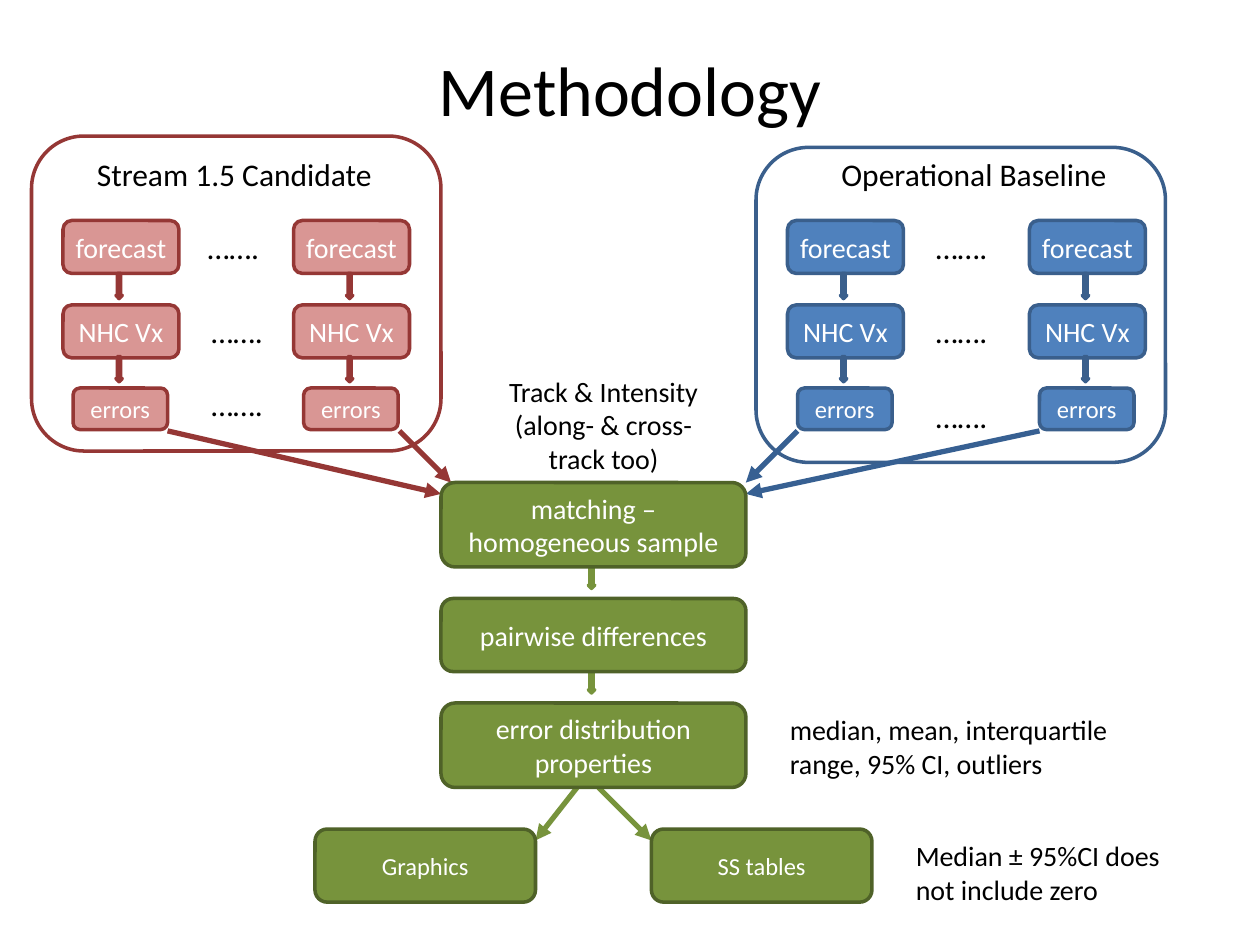
import pptx
import pptx.util
import pptx.dml.color
import pptx.enum.shapes
import pptx.enum.text
import pptx.oxml
import pptx.oxml.ns
from dataclasses import dataclass
from typing import Optional

Inches = pptx.util.Inches
Pt = pptx.util.Pt
Shape = pptx.enum.shapes.MSO_SHAPE
Align = pptx.enum.text.PP_ALIGN
Anchor = pptx.enum.text.MSO_ANCHOR

FONT = "Calibri"
BLACK, WHITE = "000000", "FFFFFF"
GREEN, DARK_GREEN, PALE_GREEN = "77933C", "4F6228", "C3D69B"
DOTS = "……."


@dataclass
class Stream:
    """One framed set of forecasts feeding the matching step."""
    title: str
    title_left: float
    title_width: float
    frame_left: float
    frame_top: float
    columns: tuple
    dots: tuple
    fill: str
    line: str
    arrow: str
    arrows: tuple


STREAMS = [
    Stream("Stream 1.5 Candidate", 0.67, 2.41, 0.25, 1.08, (0.5, 2.33),
           ((1.55, 1.76), (1.58, 2.43), (1.58, 3.01)),
           "D99694", "953735", "953735",
           ((1.33, 3.42, 3.5, 3.92), (3.17, 3.42, 3.58, 3.83))),
    Stream("Operational Baseline", 6.58, 2.33, 6, 1.17, (6.25, 8.17),
           ((7.33, 1.76), (7.33, 2.43), (7.33, 3.1)),
           "4F81BD", "3A5F8C", "376092",
           ((6.33, 3.42, 5.92, 3.83), (8.25, 3.42, 5.92, 3.92))),
]


def color(value: str) -> pptx.dml.color.RGBColor:
    return pptx.dml.color.RGBColor.from_string(value)


def write(frame, text: str, *, size: float = 16, ink: str = BLACK,
          align=Align.LEFT, anchor=Anchor.TOP, wrap: bool = True,
          inset: Optional[float] = None) -> None:
    """Put one formatted paragraph in a text frame."""
    frame.word_wrap = wrap
    frame.vertical_anchor = anchor
    if inset is not None:
        frame.margin_left = frame.margin_right = Inches(inset)
        frame.margin_top = frame.margin_bottom = Inches(inset)
    para = frame.paragraphs[0]
    para.alignment = align
    span = para.add_run()
    span.text = text
    span.font.name = FONT
    span.font.size = Pt(size)
    span.font.color.rgb = color(ink)


def add_label(shapes, text: str, left: float, top: float, width: float,
              height: float, **style) -> None:
    box = shapes.add_textbox(Inches(left), Inches(top), Inches(width), Inches(height))
    write(box.text_frame, text, **style)


def add_block(shapes, kind, left: float, top: float, width: float, height: float,
              fill: Optional[str], line: str, text: str = "", **style) -> None:
    box = shapes.add_shape(kind, Inches(left), Inches(top), Inches(width), Inches(height))
    box.shadow.inherit = False
    if fill:
        box.fill.solid()
        box.fill.fore_color.rgb = color(fill)
    else:
        box.fill.background()
    box.line.color.rgb = color(line)
    box.line.width = Pt(2)
    if text:
        write(box.text_frame, text, ink=WHITE, align=Align.CENTER,
              anchor=Anchor.MIDDLE, **style)


def add_arrow(shapes, left: float, top: float, right: float, bottom: float,
              ink: str) -> None:
    arrow = shapes.add_connector(pptx.enum.shapes.MSO_CONNECTOR.STRAIGHT, Inches(left),
                                 Inches(top), Inches(right), Inches(bottom))
    arrow.line.color.rgb = color(ink)
    arrow.line.width = Pt(3)
    outline = arrow.line._get_or_add_ln()
    head = pptx.oxml.ns.qn("a:tailEnd")
    outline.append(outline.makeelement(head, {"type": "triangle"}))
    properties = arrow._element.spPr
    properties.append(properties.makeelement(pptx.oxml.ns.qn("a:effectLst"), {}))


def add_column(shapes, left: float, stream: Stream) -> None:
    """Forecast, verification and errors, joined by small down arrows."""
    group = shapes.add_group_shape().shapes
    paint = (stream.fill, stream.line)
    add_block(group, Shape.ROUNDED_RECTANGLE, left, 1.75, 0.92, 0.42, *paint,
              "forecast", inset=0.05)
    add_block(group, Shape.ROUNDED_RECTANGLE, left + 0.08, 3.08, 0.75, 0.33, *paint,
              "errors", size=14, inset=0.05)
    add_block(group, Shape.ROUNDED_RECTANGLE, left, 2.42, 0.92, 0.42, *paint, "NHC Vx")
    for top in (2.17, 2.83):
        add_block(group, Shape.DOWN_ARROW, left + 0.42, top, 0.05, 0.2, *paint)


def main() -> None:
    deck = pptx.Presentation()
    deck.slide_width, deck.slide_height = Inches(10), Inches(7.5)
    page = deck.slides.add_slide(deck.slide_layouts[5])
    shapes = page.shapes

    # Title
    title = shapes.title
    title.left, title.top = Inches(0.5), Inches(0.2)
    title.width, title.height = Inches(9), Inches(1)
    write(title.text_frame, "Methodology", size=40, align=Align.CENTER,
          anchor=Anchor.MIDDLE)

    # Results, with the arrows that lead to them
    add_arrow(shapes, 4.75, 6.25, 5.17, 6.67, GREEN)
    add_arrow(shapes, 4.58, 6.25, 4.25, 6.67, GREEN)
    for left, text in ((2.5, "Graphics"), (5.17, "SS tables")):
        add_block(shapes, Shape.ROUNDED_RECTANGLE, left, 6.58, 1.75, 0.58,
                  GREEN, DARK_GREEN, text, size=14, inset=0.05)

    # Candidate and baseline streams
    for stream in STREAMS:
        add_block(shapes, Shape.ROUNDED_RECTANGLE, stream.frame_left, stream.frame_top,
                  3.25, 2.5, None, stream.line)
        add_label(shapes, stream.title, stream.title_left, 1.18, stream.title_width,
                  0.4, size=18, wrap=False)
        for left in stream.columns:
            add_column(shapes, left, stream)
        for left, top in stream.dots:
            add_label(shapes, DOTS, left, top, 0.61, 0.4, size=18, wrap=False)
        for ends in stream.arrows:
            add_arrow(shapes, *ends, stream.arrow)

    # Central processing steps
    for top in (4.44, 5.27):
        add_block(shapes, Shape.DOWN_ARROW, 4.67, top, 0.05, 0.23, PALE_GREEN, GREEN)
    for top, height, text in ((3.83, 0.67, "matching – homogeneous sample"),
                              (4.75, 0.58, "pairwise differences"),
                              (5.58, 0.67, "error distribution properties")):
        add_block(shapes, Shape.ROUNDED_RECTANGLE, 3.5, top, 2.42, height,
                  GREEN, DARK_GREEN, text)

    # Side notes
    add_label(shapes, "Track & Intensity (along- & cross- track too)",
              3.83, 2.92, 1.92, 0.91, align=Align.CENTER)
    add_label(shapes, "median, mean, interquartile range, 95% CI, outliers",
              6.17, 5.61, 2.92, 0.64)
    add_label(shapes, "Median ± 95%CI does not include zero", 7.17, 6.61, 2.17, 0.64)

    deck.save("out.pptx")


if __name__ == "__main__":
    main()
